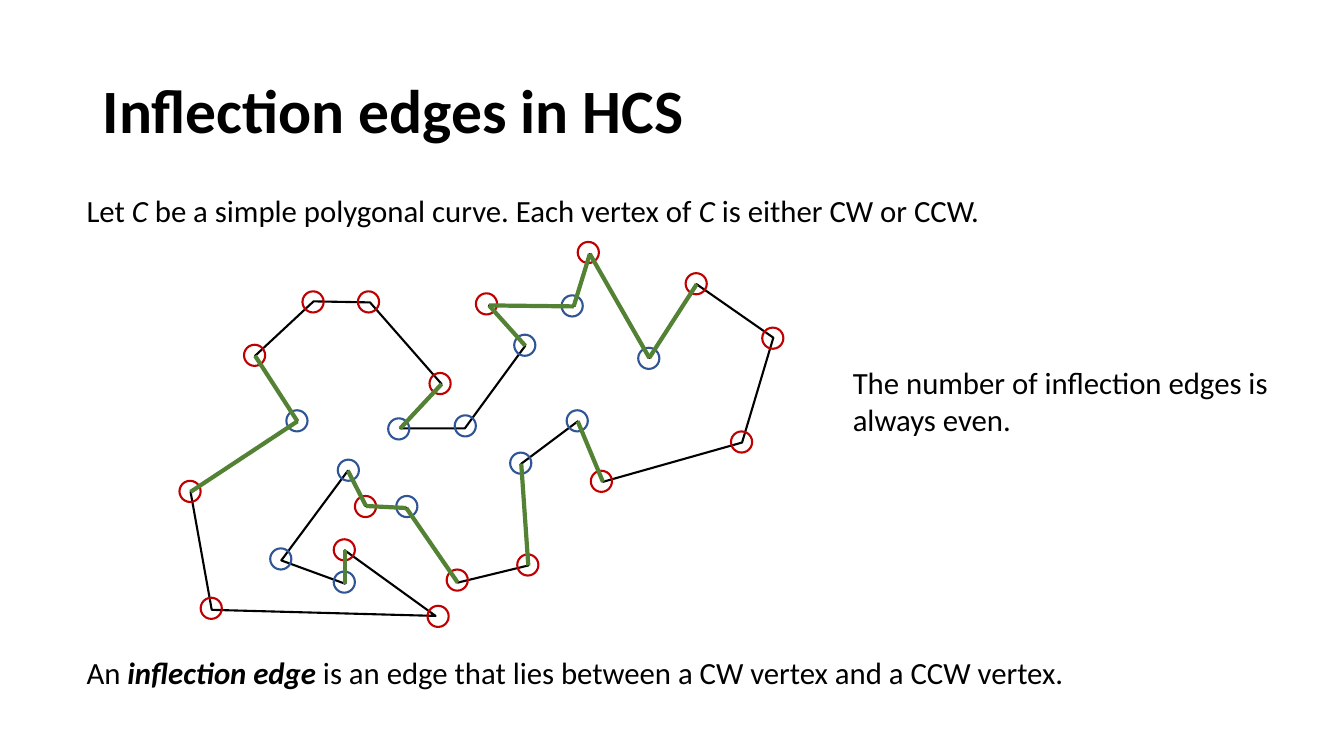
from dataclasses import dataclass

from pptx import Presentation
from pptx.dml.color import RGBColor
from pptx.dml.line import LineFormat
from pptx.enum.shapes import MSO_CONNECTOR, MSO_SHAPE
from pptx.enum.text import MSO_ANCHOR, MSO_AUTO_SIZE
from pptx.oxml.ns import qn
from pptx.shapes.shapetree import GroupShapes, SlideShapes
from pptx.text.text import TextFrame
from pptx.util import Pt

PX = 9144  # EMU per px, 100 px to the inch
RING = 21
FONT = "Calibri"

BLACK = RGBColor(0x00, 0x00, 0x00)
RED = RGBColor(0xC0, 0x00, 0x00)
BLUE = RGBColor(0x2F, 0x55, 0x97)
GREEN = RGBColor(0x54, 0x82, 0x35)


@dataclass(frozen=True)
class Run:
    text: str
    bold: bool = False
    italic: bool = False


@dataclass(frozen=True)
class Label:
    left: int
    top: int
    width: int
    height: int
    runs: tuple[Run, ...]


@dataclass(frozen=True)
class Vertex:
    x: int
    y: int
    left: int  # corner of the ring around the vertex
    top: int


TITLE = Label(92, 40, 1150, 145, (Run("Inflection edges in HCS", bold=True),))

NOTES = (
    Label(76, 185, 1129, 47, (
        Run("Let "),
        Run("C", italic=True),
        Run(" be a simple polygonal curve. Each vertex of "),
        Run("C", italic=True),
        Run(" is either CW or CCW."),
    )),
    Label(76, 644, 1129, 47, (
        Run("An "),
        Run("inflection edge ", bold=True, italic=True),
        Run("is an edge that lies between a CW vertex and a CCW vertex."),
    )),
    Label(836, 356, 483, 84, (
        Run("The number of inflection edges is always even."),
    )),
)

# The curve in drawing order
CURVE = (
    Vertex(253, 353, 242, 342),
    Vertex(311, 299, 300, 289),
    Vertex(367, 300, 355, 289),
    Vertex(438, 381, 426, 370),
    Vertex(397, 425, 385, 415),
    Vertex(461, 425, 451, 412),
    Vertex(521, 343, 510, 332),
    Vertex(485, 303, 472, 291),
    Vertex(569, 304, 557, 293),
    Vertex(585, 252, 573, 240),
    Vertex(644, 355, 633, 345),
    Vertex(691, 282, 680, 271),
    Vertex(767, 335, 756, 325),
    Vertex(736, 439, 725, 428),
    Vertex(598, 478, 586, 467),
    Vertex(573, 418, 562, 407),
    Vertex(517, 460, 506, 449),
    Vertex(524, 561, 513, 550),
    Vertex(454, 578, 443, 565),
    Vertex(403, 504, 393, 492),
    Vertex(363, 502, 352, 492),
    Vertex(345, 467, 335, 456),
    Vertex(279, 556, 268, 544),
    Vertex(342, 579, 331, 567),
    Vertex(342, 546, 331, 535),
    Vertex(432, 611, 424, 601),
    Vertex(210, 605, 199, 593),
    Vertex(189, 488, 178, 477),
    Vertex(295, 418, 284, 407),
)


def clockwise(prev: Vertex, here: Vertex, after: Vertex) -> bool:
    cross = ((here.x - prev.x) * (after.y - here.y)
             - (here.y - prev.y) * (after.x - here.x))
    return cross > 0


def ink(line: LineFormat, color: RGBColor, width: float) -> None:
    line.color.rgb = color
    line.width = Pt(width)


def write(shapes: SlideShapes, label: Label, size: int) -> TextFrame:
    box = shapes.add_textbox(label.left * PX, label.top * PX,
                             label.width * PX, label.height * PX)
    frame = box.text_frame
    frame.word_wrap = True
    for part in label.runs:
        run = frame.paragraphs[0].add_run()
        run.text = part.text
        font = run.font
        font.name, font.size = FONT, Pt(size)
        font.bold, font.italic = part.bold, part.italic
        font.color.rgb = BLACK
    return frame


def outline(shapes: SlideShapes) -> None:
    first, *rest = CURVE
    pen = shapes.build_freeform(first.x, first.y, scale=PX)
    pen.add_line_segments([(v.x, v.y) for v in rest], close=True)
    shape = pen.convert_to_shape()
    shape.shadow.inherit = False
    shape.fill.background()
    ink(shape.line, BLACK, 1.5)


def ring(shapes: GroupShapes, vertex: Vertex, color: RGBColor) -> None:
    shape = shapes.add_shape(MSO_SHAPE.OVAL, vertex.left * PX, vertex.top * PX,
                             RING * PX, RING * PX)
    shape.shadow.inherit = False
    shape.fill.background()
    ink(shape.line, color, 1.5)


def edge(shapes: GroupShapes, start: Vertex, end: Vertex) -> None:
    link = shapes.add_connector(MSO_CONNECTOR.STRAIGHT, start.x * PX,
                                start.y * PX, end.x * PX, end.y * PX)
    props = link._element.spPr
    ink(link.line, GREEN, 3)
    props.append(props.makeelement(qn("a:effectLst"), {}))


def main() -> None:
    deck = Presentation()
    deck.slide_width, deck.slide_height = 1333 * PX, 750 * PX
    shapes = deck.slides.add_slide(deck.slide_layouts[6]).shapes

    # Title and text
    frame = write(shapes, TITLE, 44)
    frame.vertical_anchor = MSO_ANCHOR.MIDDLE
    frame.paragraphs[0].line_spacing = 0.9
    for label in NOTES:
        write(shapes, label, 22).auto_size = MSO_AUTO_SIZE.SHAPE_TO_FIT_TEXT

    # Polygonal curve
    outline(shapes)

    # Rings, red for CW and blue for CCW
    ahead = CURVE[1:] + CURVE[:1]
    behind = CURVE[-1:] + CURVE[:-1]
    turns = [clockwise(*trio) for trio in zip(behind, CURVE, ahead)]
    for side, color in ((True, RED), (False, BLUE)):
        group = shapes.add_group_shape().shapes
        for vertex, turn in zip(CURVE, turns):
            if turn == side:
                ring(group, vertex, color)

    # Inflection edges, where the turn changes
    group = shapes.add_group_shape().shapes
    for i, (start, end) in enumerate(zip(CURVE, ahead)):
        if turns[i] != turns[(i + 1) % len(turns)]:
            edge(group, start, end)

    deck.save("out.pptx")


if __name__ == "__main__":
    main()
